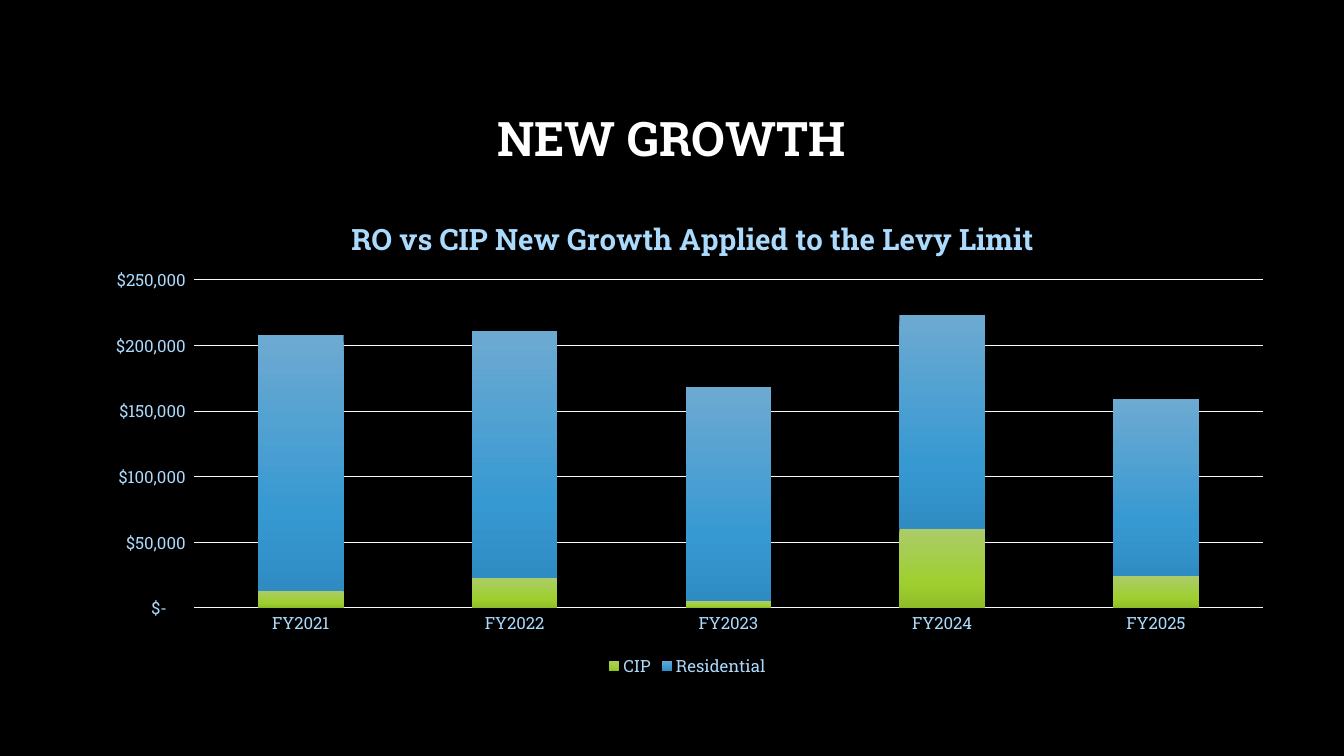
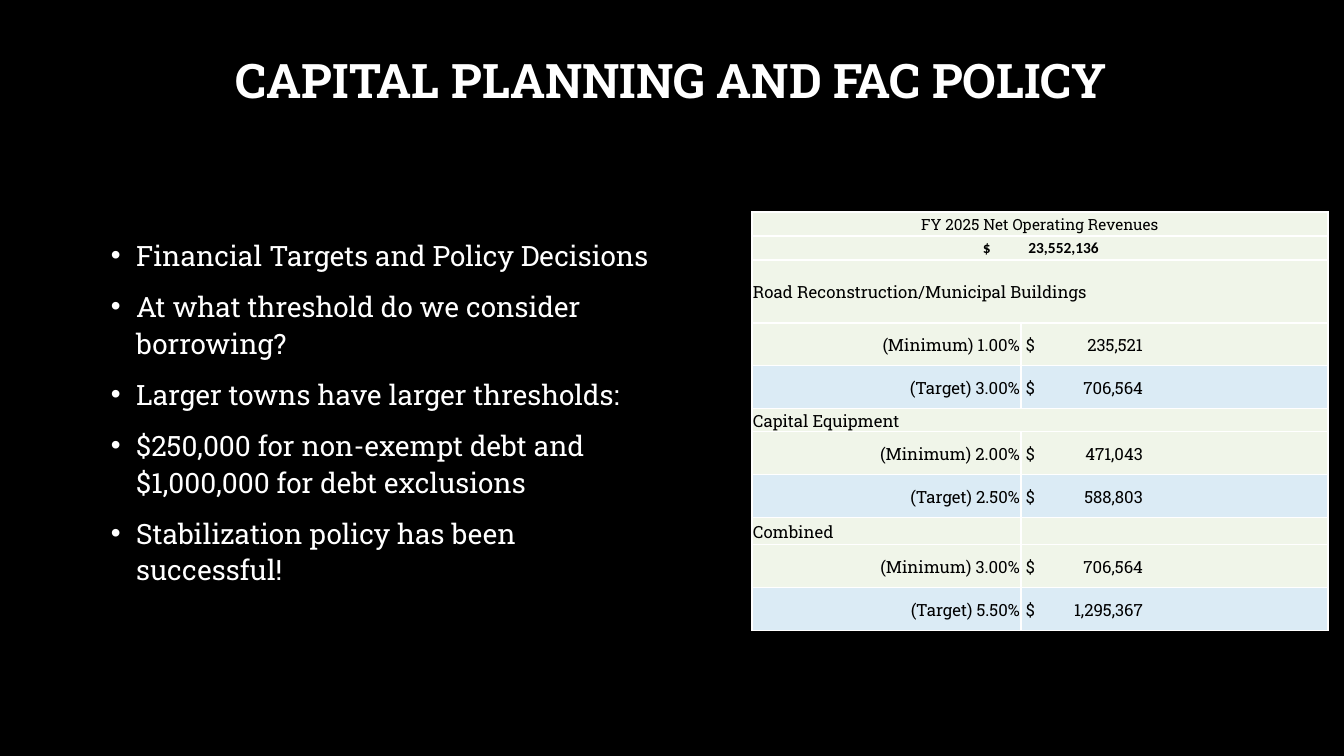
import pptx
import pptx.chart.data
import pptx.dml.color
import pptx.enum.chart
import pptx.enum.text
import pptx.oxml.ns
import pptx.util
from lxml import etree

SLIDE_SIZE = (1344, 756)
SLAB, NUMERIC = "Roboto Slab", "Calibri"
BLACK, WHITE = "000000", "FFFFFF"
PALE_BLUE, GRID = "ABDAFC", "F2F9FF"
BASE_ROW, TARGET_ROW = "F0F5E9", "DBEBF5"

GROWTH_TITLE = "NEW GROWTH"
GROWTH_CAPTION = "RO vs CIP New Growth Applied to the Levy Limit"
YEARS = ["FY2021", "FY2022", "FY2023", "FY2024", "FY2025"]
# name, values, gradient stops (percent, colour)
GROWTH = [
    ("CIP", (13000, 23000, 5000, 60000, 24000),
     ((0, "ABCC69"), (69, "9ECF2E"), (100, "90BC2A"))),
    ("Residential", (195000, 188000, 163000, 163000, 135000),
     ((0, "6DAAD2"), (69, "3799D2"), (100, "2F8CC2"))),
]
DOLLARS = '_("$"* #,##0_);_("$"* \\(#,##0\\);_("$"* "-"??_);_(@_)'
CHART_BOX = (88, 186, 1199, 495)
PLOT_BOX = (194, 280, 1069, 328)
CAPTION_CORNER = (346, 211)

POLICY_TITLE = "CAPITAL PLANNING AND FAC POLICY"
POLICY_POINTS = [
    "Financial Targets and Policy Decisions",
    "At what threshold do we consider borrowing?",
    "Larger towns have larger thresholds:",
    "$250,000 for non-exempt debt and $1,000,000 for debt exclusions",
    "Stabilization policy has been successful!",
]
REVENUE_HEADING = ("FY 2025 Net Operating Revenues", "23,552,136")
# group, height of its heading row, heading spans both columns, (level, amount)
TARGETS = [
    ("Road Reconstruction/Municipal Buildings", 63, True,
     [("(Minimum) 1.00%", "235,521"), ("(Target) 3.00%", "706,564")]),
    ("Capital Equipment", 23, True,
     [("(Minimum) 2.00%", "471,043"), ("(Target) 2.50%", "588,803")]),
    ("Combined", 27, False,
     [("(Minimum) 3.00%", "706,564"), ("(Target) 5.50%", "1,295,367")]),
]
HEADING_HEIGHT, LEVEL_HEIGHT = 24, 43
COLUMN_WIDTHS = (269, 307)
TABLE_CORNER = (752, 212)
# dollar sign (left tab) and end of the figure (right tab)
TOTAL_TABS, AMOUNT_TABS = (230, 346), (4, 121)

ALIGN = pptx.enum.text.PP_ALIGN
ANCHOR = pptx.enum.text.MSO_ANCHOR


def px(length):
    return pptx.util.Emu(round(length * 914400 / 100.8))


def rgb(colour):
    return pptx.dml.color.RGBColor.from_string(colour)


def add_element(parent, tag, **attributes):
    child = etree.SubElement(parent, pptx.oxml.ns.qn(tag))
    for name, value in attributes.items():
        child.set(name, str(value))
    return child


def set_font(font, size, colour, bold=False, face=SLAB):
    font.size = pptx.util.Pt(size)
    font.name = face
    font.bold = bold
    font.color.rgb = rgb(colour)


def add_run(paragraph, text, *style, **options):
    run = paragraph.add_run()
    run.text = text
    set_font(run.font, *style, **options)


def add_text_frame(slide, box):
    frame = slide.shapes.add_textbox(*map(px, box)).text_frame
    frame.word_wrap = True
    return frame


def add_titled_slide(prs, title, top):
    slide = prs.slides.add_slide(prs.slide_layouts[6])
    frame = add_text_frame(slide, (101, top, 1141, 146))
    frame.vertical_anchor = ANCHOR.MIDDLE
    paragraph = frame.paragraphs[0]
    paragraph.alignment = ALIGN.CENTER
    paragraph.line_spacing = 0.9
    add_run(paragraph, title, 34, WHITE, bold=True)
    return slide


def set_layout(element, index, **position):
    """Give a chart part a manual position in fractions of the chart."""
    for old in element.findall(pptx.oxml.ns.qn("c:layout")):
        element.remove(old)
    layout = add_element(element, "c:layout")
    element.insert(index, layout)
    manual = add_element(layout, "c:manualLayout")
    if "w" in position:
        add_element(manual, "c:layoutTarget", val="inner")
    for side in "xy":
        add_element(manual, f"c:{side}Mode", val="edge")
    for name, value in position.items():
        add_element(manual, f"c:{name}", val=round(value, 4))


def chart_fractions(x, y, w=None, h=None):
    left, top, width, height = CHART_BOX
    position = {"x": (x - left) / width, "y": (y - top) / height}
    if w is not None:
        position.update(w=w / width, h=h / height)
    return position


def set_gradient(fill, stops):
    fill.gradient()
    fill.gradient_angle = 270
    stop_list = fill._xPr.find(".//" + pptx.oxml.ns.qn("a:gsLst"))
    for old in list(stop_list):
        stop_list.remove(old)
    for percent, colour in stops:
        stop = add_element(stop_list, "a:gs", pos=percent * 1000)
        add_element(stop, "a:srgbClr", val=colour)


def set_grid_line(line):
    line.color.rgb = rgb(GRID)
    line.width = pptx.util.Pt(0.75)


def add_growth_chart(slide):
    data = pptx.chart.data.CategoryChartData()
    data.categories = YEARS
    for name, values, _ in GROWTH:
        data.add_series(name, values)
    chart = slide.shapes.add_chart(
        pptx.enum.chart.XL_CHART_TYPE.COLUMN_STACKED,
        *map(px, CHART_BOX), data).chart
    set_font(chart.font, 12, PALE_BLUE)

    plot = chart.plots[0]
    plot.gap_width, plot.overlap = 150, 100
    plot.vary_by_categories = False
    for series, (_, _, stops) in zip(plot.series, GROWTH):
        set_gradient(series.format.fill, stops)

    for axis in (chart.category_axis, chart.value_axis):
        axis.major_tick_mark = pptx.enum.chart.XL_TICK_MARK.NONE
        set_font(axis.tick_labels.font, 12, PALE_BLUE)
    set_grid_line(chart.category_axis.format.line)
    amounts = chart.value_axis
    amounts.minimum_scale, amounts.maximum_scale = 0, 250000
    amounts.major_unit = 50000
    amounts.format.line.fill.background()
    set_grid_line(amounts.major_gridlines.format.line)
    amounts.tick_labels.number_format = DOLLARS
    amounts.tick_labels.number_format_is_linked = False

    chart.has_legend = True
    chart.legend.position = pptx.enum.chart.XL_LEGEND_POSITION.BOTTOM
    chart.legend.include_in_layout = False
    set_font(chart.legend.font, 12, PALE_BLUE)

    caption = chart.chart_title
    add_run(caption.text_frame.paragraphs[0], GROWTH_CAPTION, 21, PALE_BLUE,
            bold=True)
    set_layout(caption._element, 1, **chart_fractions(*CAPTION_CORNER))
    set_layout(chart._chartSpace.chart.plotArea, 0,
               **chart_fractions(*PLOT_BOX))


def add_policy_points(slide):
    frame = add_text_frame(slide, (101, 230, 562, 408))
    for index, point in enumerate(POLICY_POINTS):
        paragraph = frame.add_paragraph() if index else frame.paragraphs[0]
        paragraph.line_spacing = 1.1
        paragraph.space_after = pptx.util.Pt(10)
        properties = paragraph._p.get_or_add_pPr()
        indent = pptx.util.Inches(0.25)
        properties.set("marL", str(indent))
        properties.set("indent", str(-indent))
        add_element(properties, "a:buFont", typeface="Arial")
        add_element(properties, "a:buChar", char="•")
        add_run(paragraph, point, 20, WHITE)


def style_cell(cell, fill):
    cell.vertical_anchor = ANCHOR.MIDDLE
    cell.margin_left = cell.margin_right = cell.margin_top = px(1)
    cell.margin_bottom = 0
    properties = cell._tc.get_or_add_tcPr()
    for side in "LRTB":
        border = add_element(properties, f"a:ln{side}", w=pptx.util.Pt(1))
        solid = add_element(border, "a:solidFill")
        add_element(solid, "a:srgbClr", val=WHITE)
    cell.fill.solid()
    cell.fill.fore_color.rgb = rgb(fill)


def write_cell(cell, text, align=ALIGN.LEFT, size=12):
    paragraph = cell.text_frame.paragraphs[0]
    paragraph.alignment = align
    add_run(paragraph, text, size, BLACK)


def write_amount(cell, amount, tabs, size=12, **style):
    paragraph = cell.text_frame.paragraphs[0]
    tab_list = add_element(paragraph._p.get_or_add_pPr(), "a:tabLst")
    for position, align in zip(tabs, "lr"):
        add_element(tab_list, "a:tab", pos=px(position), algn=align)
    add_run(paragraph, f"\t$\t{amount}", size, BLACK, **style)


def add_targets_table(slide):
    heights, fills = [HEADING_HEIGHT] * 2, [BASE_ROW] * 2
    for _, group_height, _, levels in TARGETS:
        heights += [group_height] + [LEVEL_HEIGHT] * len(levels)
        fills += [BASE_ROW, BASE_ROW, TARGET_ROW]
    box = (*TABLE_CORNER, sum(COLUMN_WIDTHS), sum(heights))
    table = slide.shapes.add_table(
        len(heights), len(COLUMN_WIDTHS), *map(px, box)).table
    table.first_row = table.horz_banding = False
    for column, width in zip(table.columns, COLUMN_WIDTHS):
        column.width = px(width)
    for row, height, fill in zip(table.rows, heights, fills):
        row.height = px(height)
        for cell in row.cells:
            style_cell(cell, fill)

    def span(row):
        table.cell(row, 0).merge(table.cell(row, 1))
        return table.cell(row, 0)

    heading, total = REVENUE_HEADING
    write_cell(span(0), heading, ALIGN.CENTER, 11)
    write_amount(span(1), total, TOTAL_TABS, size=11, bold=True, face=NUMERIC)
    row = 2
    for group, _, spans, levels in TARGETS:
        write_cell(span(row) if spans else table.cell(row, 0), group)
        for row, (level, amount) in enumerate(levels, row + 1):
            write_cell(table.cell(row, 0), level, ALIGN.RIGHT)
            write_amount(table.cell(row, 1), amount, AMOUNT_TABS)
        row += 1

    # Empty cells keep a small font so that they do not stretch their row.
    for cell in table.iter_cells():
        if not cell.text_frame.text:
            add_element(cell.text_frame.paragraphs[0]._p, "a:endParaRPr",
                        sz=1200)


def main():
    prs = pptx.Presentation()
    prs.slide_width, prs.slide_height = map(px, SLIDE_SIZE)
    background = prs.slide_master.background.fill
    background.solid()
    background.fore_color.rgb = rgb(BLACK)

    add_growth_chart(add_titled_slide(prs, GROWTH_TITLE, 68))
    policy = add_titled_slide(prs, POLICY_TITLE, 10)
    add_policy_points(policy)
    add_targets_table(policy)
    prs.save("out.pptx")


if __name__ == "__main__":
    main()
